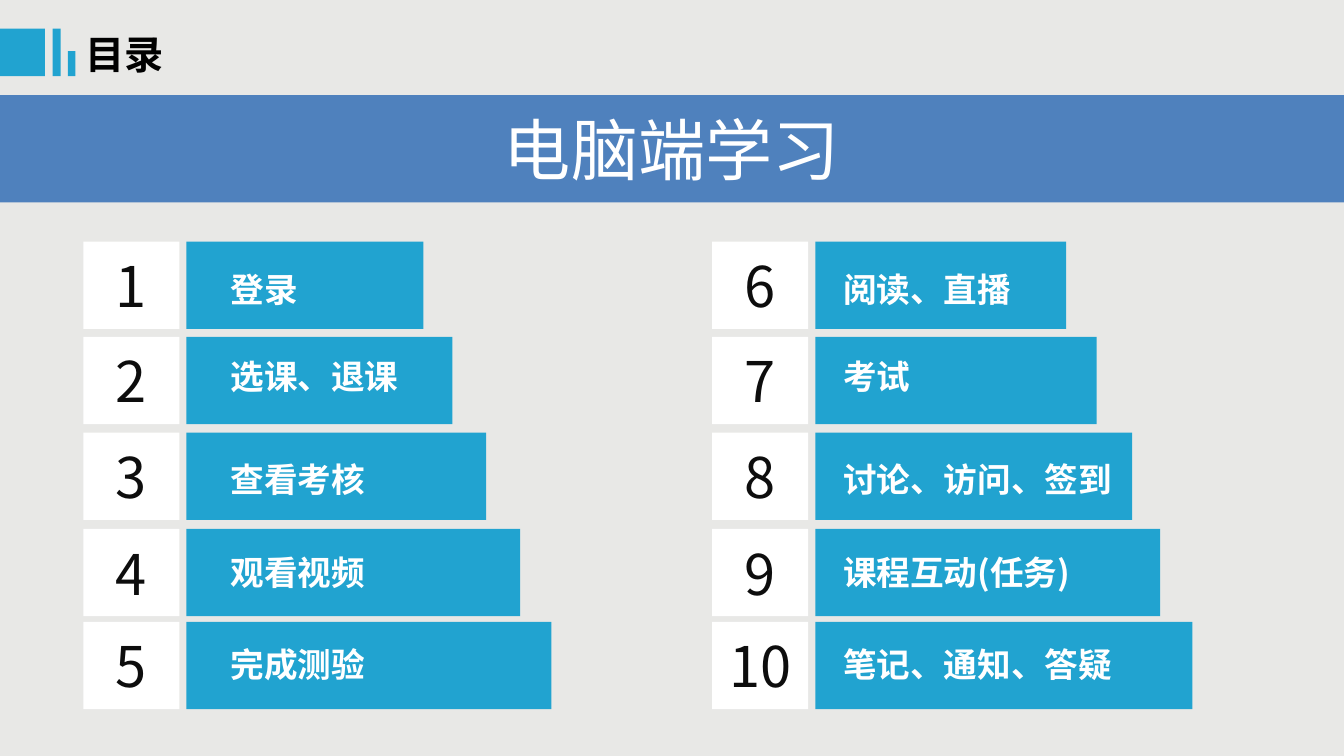
from lxml.etree import SubElement
from pptx import Presentation
from pptx.dml.color import RGBColor
from pptx.enum.shapes import MSO_SHAPE
from pptx.enum.text import MSO_ANCHOR, MSO_AUTO_SIZE, PP_ALIGN
from pptx.oxml.ns import qn
from pptx.util import Cm, Pt

# Content: each column has number left, label left, then (label, bar width)
TITLE = "目录"
BANNER = "电脑端学习"
COLUMNS = [
    (2.1, 5.56, [("登录", 5.97), ("选课、退课", 6.7), ("查看考核", 7.55),
                 ("观看视频", 8.41), ("完成测验", 9.2)]),
    (17.95, 21, [("阅读、直播", 6.32), ("考试", 7.09), ("讨论、访问、签到", 7.98),
                 ("课程互动(任务)", 8.69), ("笔记、通知、答疑", 9.5)]),
]
ROWS = [(6.09, 6.65), (8.49, 8.84), (10.9, 11.43), (13.33, 13.79), (15.67, 16.1)]
TITLE_MARKS = [(0, 0.72, 1.13, 1.2), (1.33, 0.72, 0.2, 1.2), (1.71, 1.29, 0.19, 0.63)]

WIDTH, HEIGHT = 33.87, 19.05
ROW_H, NUMBER_W, BAR_OFFSET = 2.2, 2.42, 2.6
LABEL_W, LABEL_H = 7.62, 1.28
FONT = "Noto Sans CJK SC"
COLORS = {"page": "E8E8E6", "bar": "21A3D0", "banner": "4F81BD",
          "white": "FFFFFF", "number": "0D0D0D", "title": "000000"}


def color(name):
    return RGBColor.from_string(COLORS[name])


def write(sp, text, size, ink, bold=False):
    p = sp.text_frame.paragraphs[0]
    p.text = text
    p.font.size, p.font.bold, p.font.name = Pt(size), bold, FONT
    p.font.color.rgb = color(ink)
    # East Asian typeface follows the Latin one
    latin = next(p._p.iter(qn("a:latin")))
    SubElement(latin.getparent(), qn("a:ea"), typeface=FONT)
    return p


def add_block(x, y, w, h, fill, text="", size=40, ink="number"):
    sp = s.shapes.add_shape(MSO_SHAPE.RECTANGLE, Cm(x), Cm(y), Cm(w), Cm(h))
    sp.shadow.inherit = False
    sp.fill.solid()
    sp.fill.fore_color.rgb = color(fill)
    sp.line.fill.background()
    if text:
        sp.text_frame.vertical_anchor = MSO_ANCHOR.MIDDLE
        write(sp, text, size, ink).alignment = PP_ALIGN.CENTER


def add_label(x, y, w, h, text, size, ink):
    sp = s.shapes.add_textbox(Cm(x), Cm(y), Cm(w), Cm(h))
    sp.text_frame.word_wrap = True
    sp.text_frame.auto_size = MSO_AUTO_SIZE.SHAPE_TO_FIT_TEXT
    write(sp, text, size, ink, bold=True)


prs = Presentation()
prs.slide_width, prs.slide_height = Cm(WIDTH), Cm(HEIGHT)
s = prs.slides.add_slide(prs.slide_layouts[6])
s.background.fill.solid()
s.background.fill.fore_color.rgb = color("page")

# Title and banner
for mark in TITLE_MARKS:
    add_block(*mark, "bar")
add_label(1.9, 0.64, 2.92, 1.45, TITLE, 28, "title")
add_block(0, 2.4, WIDTH, 2.7, "banner", BANNER, 48, "white")

# Numbered contents
for col, (number_x, label_x, items) in enumerate(COLUMNS):
    for row, ((label, bar_w), (top, label_top)) in enumerate(zip(items, ROWS)):
        number = col * len(ROWS) + row + 1
        add_block(number_x + BAR_OFFSET, top, bar_w, ROW_H, "bar")
        add_block(number_x, top, NUMBER_W, ROW_H, "white", str(number))
        add_label(label_x, label_top, LABEL_W, LABEL_H, label, 24, "white")

prs.save("out.pptx")
